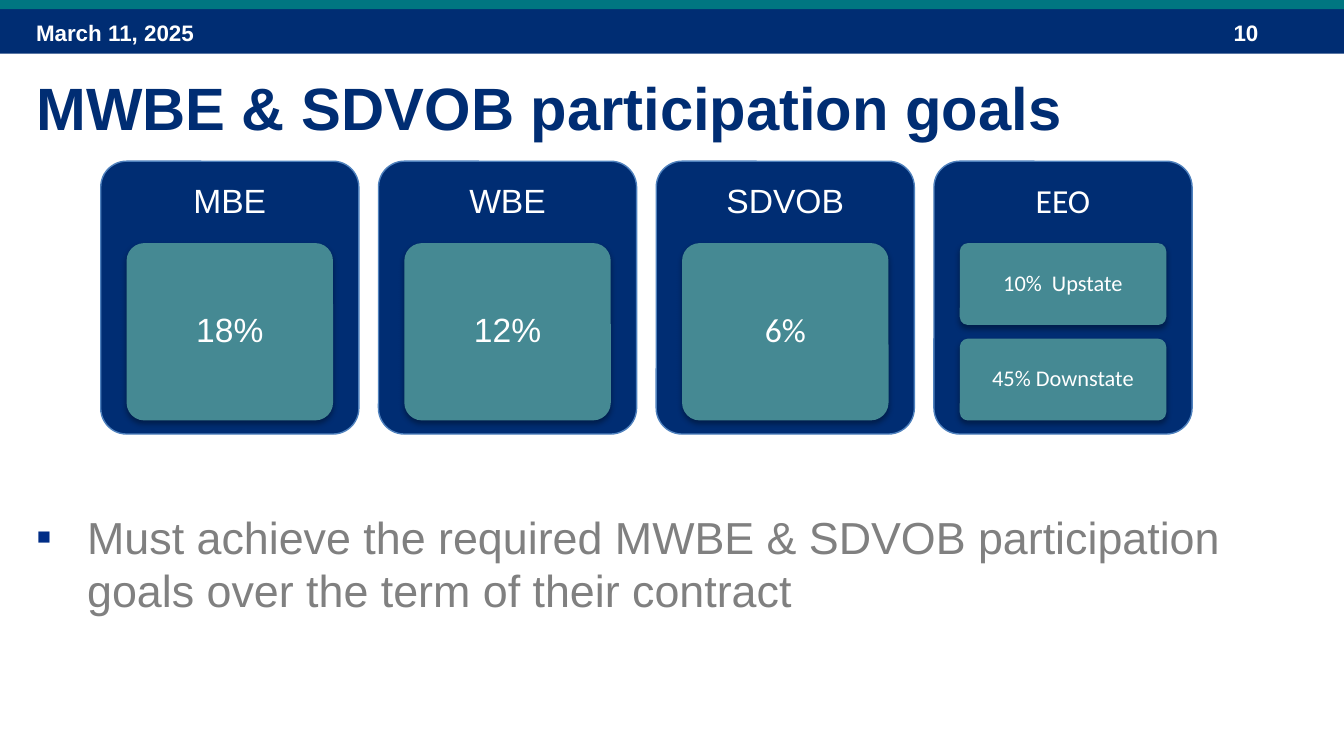
from lxml import etree
from pptx import Presentation
from pptx.dml.color import RGBColor
from pptx.enum.shapes import MSO_SHAPE as Preset
from pptx.enum.text import MSO_ANCHOR as Anchor, MSO_AUTO_SIZE as AutoSize, PP_ALIGN as Align
from pptx.oxml import parse_xml
from pptx.oxml.ns import nsdecls, qn
from pptx.util import Inches, Pt

WIDTH = 10
HEIGHT = WIDTH * 9 / 16
COLORS = {
    "navy": "002D73", "teal": "007681", "tile": "458993", "outline": "4F81BD",
    "bullet": "002D86", "body": "808080", "white": "FFFFFF", "shadow": "000000",
}
CARDS = [
    ("MBE", "Arial", ["18%"], "Arial", 18),
    ("WBE", "Arial", ["12%"], "Arial", 18),
    ("SDVOB", "Arial", ["6%"], "Calibri", 18),
    ("EEO", "Calibri", ["10%  Upstate", "45% Downstate"], "Calibri", 12),
]


def rgb(name):
    """Return the named colour."""
    return RGBColor.from_string(COLORS[name])


def inches(box):
    """Convert a box of inches to slide lengths."""
    return [Inches(value) for value in box]


def add_text(frame, text, size, color, font="Arial", bold=False, align=Align.LEFT):
    """Write one run into the first paragraph of a frame and return the paragraph."""
    frame.word_wrap = True
    paragraph = frame.paragraphs[0]
    paragraph.alignment = align
    run = paragraph.add_run()
    run.text = text
    run.font.name, run.font.size, run.font.bold = font, Pt(size), bold
    run.font.color.rgb = rgb(color)
    return paragraph


def add_panel(slide, box, fill, preset=Preset.RECTANGLE):
    """Add a filled shape without outline or shadow."""
    shape = slide.shapes.add_shape(preset, *inches(box))
    shape.shadow.inherit = False
    shape.fill.solid()
    shape.fill.fore_color.rgb = rgb(fill)
    shape.line.fill.background()
    return shape


def add_rounded(slide, box, fill, text, size, font, inset):
    """Add a rounded panel with a centred label."""
    shape = add_panel(slide, box, fill, Preset.ROUNDED_RECTANGLE)
    shape.adjustments[0] = 0.1
    frame = shape.text_frame
    frame.vertical_anchor = Anchor.MIDDLE
    frame.margin_left = frame.margin_right = Inches(inset)
    frame.margin_top = frame.margin_bottom = Inches(inset)
    paragraph = add_text(frame, text, size, "white", font, align=Align.CENTER)
    paragraph.line_spacing = 0.9
    return shape


def add_soft_shadow(shape):
    """Give a shape a faint shadow below it."""
    effects = shape._element.spPr.find(qn("a:effectLst"))
    effects.append(parse_xml(
        f'<a:outerShdw {nsdecls("a")} blurRad="{Pt(3.1)}" dist="{Pt(1.8)}" dir="5400000" '
        f'rotWithShape="0"><a:srgbClr val="{COLORS["shadow"]}"><a:alpha val="35000"/>'
        '</a:srgbClr></a:outerShdw>'))


def add_header(slide, box):
    """Draw the header band with its date and page number."""
    left, top, width, height = box
    stripe = height * 0.17
    add_panel(slide, (left, top + stripe, width, height - stripe), "navy")
    add_panel(slide, (left, top, width, stripe), "teal")
    for text, start, share in (("March 11, 2025", 0.017, 0.233), ("10", 0.908, 0.075)):
        label_box = (left + width * start, top + height * 0.24, width * share, height * 0.75)
        label = slide.shapes.add_textbox(*inches(label_box))
        add_text(label.text_frame, text, 12, "white", bold=True)


def add_title(slide, box):
    """Place and format the title placeholder."""
    title = slide.shapes.title
    title.left, title.top, title.width, title.height = inches(box)
    title.text_frame.auto_size = AutoSize.NONE
    title.text_frame.vertical_anchor = Anchor.TOP
    add_text(title.text_frame, "MWBE & SDVOB participation goals", 32, "navy", bold=True)


def add_card(slide, box, heading, heading_font, goals, goal_font, size):
    """Draw one goal card with its tiles stacked under the heading."""
    left, top, width, height = box
    card = add_rounded(slide, box, "navy", heading, 18, heading_font, 0.07)
    card.text_frame.margin_bottom = Inches(height * 0.7 + 0.07)
    card.line.color.rgb = rgb("outline")
    card.line.width = Pt(0.75)
    gap = height * 0.05
    pitch = (height * 0.65 + gap) / len(goals)
    for index, goal in enumerate(goals):
        tile_box = (left + width * 0.1, top + height * 0.3 + index * pitch, width * 0.8, pitch - gap)
        add_soft_shadow(add_rounded(slide, tile_box, "tile", goal, size, goal_font, 0.05))


def add_cards(slide, box):
    """Spread the goal cards evenly across a box."""
    left, top, width, height = box
    gap = width * 0.018
    pitch = (width + gap) / len(CARDS)
    for index, card in enumerate(CARDS):
        add_card(slide, (left + index * pitch, top, pitch - gap, height), *card)


def add_requirement(slide, box):
    """Write the bulleted requirement."""
    text_box = slide.shapes.add_textbox(*inches(box))
    paragraph = add_text(
        text_box.text_frame,
        "Must achieve the required MWBE & SDVOB participation goals over the term of their contract",
        24, "body")
    properties = paragraph._p.get_or_add_pPr()
    properties.set("marL", str(Inches(0.38)))
    properties.set("indent", str(-Inches(0.38)))
    color = etree.SubElement(properties, qn("a:buClr"))
    etree.SubElement(color, qn("a:srgbClr"), val=COLORS["bullet"])
    etree.SubElement(properties, qn("a:buFont"), typeface="Arial")
    etree.SubElement(properties, qn("a:buChar"), char="▪")


def main():
    """Build and save the slide."""
    presentation = Presentation()
    presentation.slide_width, presentation.slide_height = inches((WIDTH, HEIGHT))
    slide = presentation.slides.add_slide(presentation.slide_layouts[5])
    margin = WIDTH * 0.017
    add_header(slide, (0, 0, WIDTH, 0.4))
    add_title(slide, (margin, 0.48, WIDTH * 0.95, 0.64))
    add_cards(slide, (0.75, 1.2, 8.12, 2.03))
    add_requirement(slide, (margin, 3.74, 9.58, 0.91))
    presentation.save("out.pptx")


if __name__ == "__main__":
    main()
